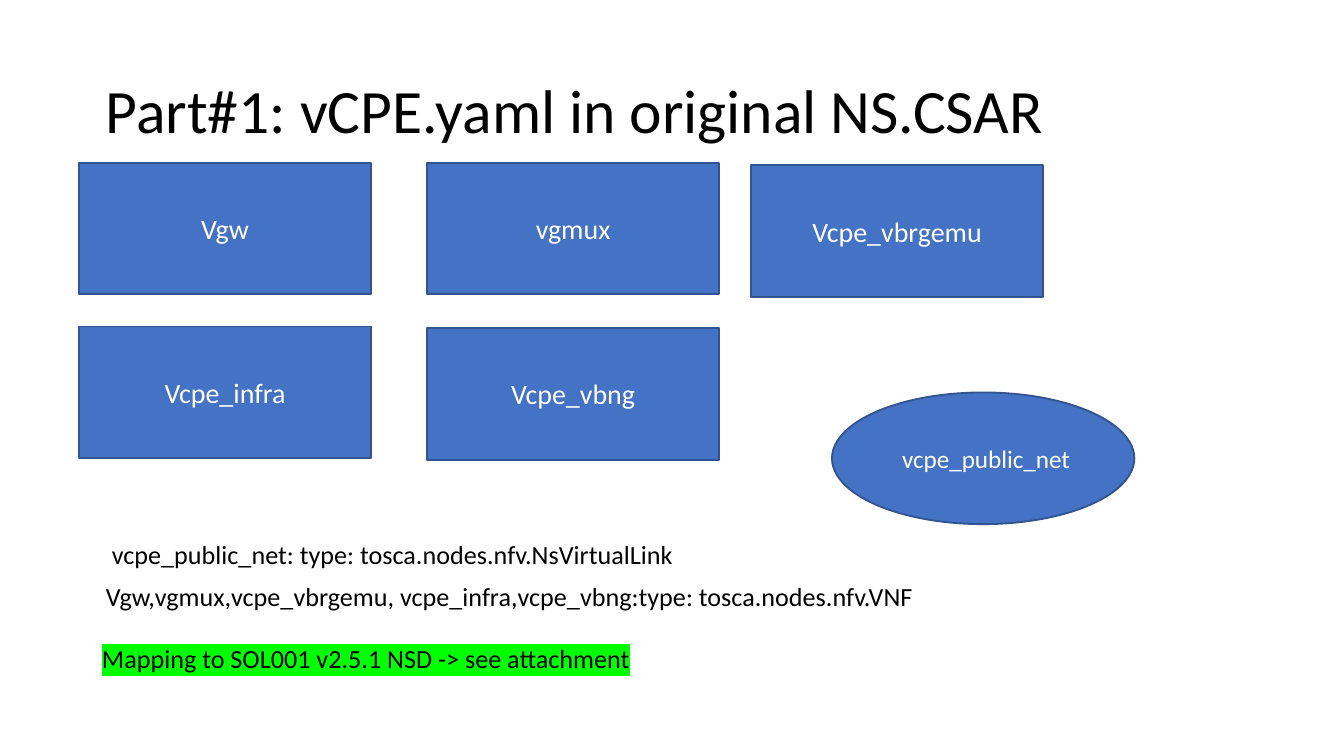
from lxml import etree
from pptx import Presentation
from pptx.dml.color import RGBColor
from pptx.enum.shapes import MSO_SHAPE as Shape
from pptx.enum.text import MSO_ANCHOR as Anchor, PP_ALIGN as Align
from pptx.oxml.ns import qn
from pptx.util import Inches, Pt

FONT = "Calibri"
NODE_WIDTH, NODE_HEIGHT = 2.17, 0.98


def color(hex_string):
    return RGBColor.from_string(hex_string)


def highlight(span, hex_string):
    mark = etree.Element(qn("a:highlight"))
    etree.SubElement(mark, qn("a:srgbClr"), val=hex_string)
    span.font.fill._xPr.find(qn("a:solidFill")).addnext(mark)


def write(shape, lines, size, ink="000000", align=Align.LEFT, anchor=Anchor.TOP,
          line_spacing=None, space_before=None, marker=None):
    frame = shape.text_frame
    frame.word_wrap = True
    frame.vertical_anchor = anchor
    for index, line in enumerate(lines):
        para = frame.add_paragraph() if index else frame.paragraphs[0]
        para.alignment = align
        para.line_spacing = line_spacing
        if space_before is not None:
            para.space_before = Pt(space_before)
        span = para.add_run()
        span.text = line
        span.font.name = FONT
        span.font.size = Pt(size)
        span.font.color.rgb = color(ink)
        if marker:
            highlight(span, marker)


def add_text(page, box, lines, size, **style):
    shape = page.shapes.add_textbox(*map(Inches, box))
    write(shape, lines, size, line_spacing=0.9, **style)


def add_node(page, box, label, size=15, kind=Shape.RECTANGLE):
    node = page.shapes.add_shape(kind, *map(Inches, box))
    node.shadow.inherit = False
    node.fill.solid()
    node.fill.fore_color.rgb = color("4472C4")
    node.line.color.rgb = color("325491")
    node.line.width = Pt(1)
    write(node, [label], size, ink="FFFFFF", align=Align.CENTER, anchor=Anchor.MIDDLE)


def add_functions(page, left, top):
    """Network functions; each offset is relative to the region's corner."""
    functions = [
        ("Vgw", 0, 0),
        ("vgmux", 2.59, 0),
        ("Vcpe_infra", 0, 1.22),
        ("Vcpe_vbng", 2.59, 1.23),
        ("Vcpe_vbrgemu", 5, 0.02),
    ]
    for label, across, down in functions:
        add_node(page, (left + across, top + down, NODE_WIDTH, NODE_HEIGHT), label)


def main():
    deck = Presentation()
    deck.slide_width = Inches(10)
    deck.slide_height = deck.slide_width * 9 // 16
    page = deck.slides.add_slide(deck.slide_layouts[6])

    add_text(page, (0.69, 0.3, 8.62, 1.09), ["Part#1: vCPE.yaml in original NS.CSAR"],
             33, anchor=Anchor.MIDDLE)
    add_text(page, (0.69, 3.98, 8.15, 0.87),
             [" vcpe_public_net: type: tosca.nodes.nfv.NsVirtualLink",
              "Vgw,vgmux,vcpe_vbrgemu, vcpe_infra,vcpe_vbng:type: tosca.nodes.nfv.VNF"],
             14, space_before=7.5)
    add_functions(page, 0.59, 1.21)
    add_node(page, (6.19, 2.92, 2.25, NODE_HEIGHT), " vcpe_public_net",
             size=13.5, kind=Shape.OVAL)
    add_text(page, (0.66, 4.76, 8.15, 0.87),
             ["Mapping to SOL001 v2.5.1 NSD -> see attachment"],
             14, space_before=7.5, marker="00FF00")

    deck.save("out.pptx")


if __name__ == "__main__":
    main()
